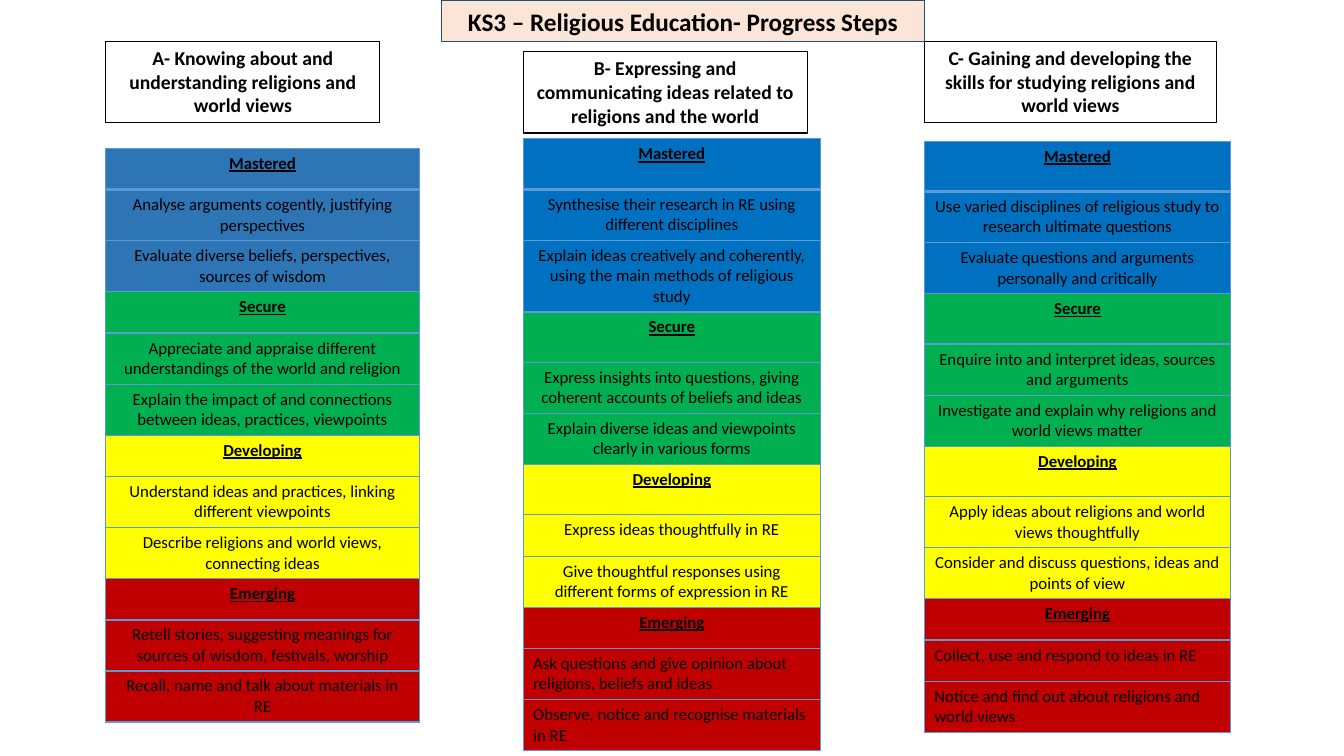
from dataclasses import dataclass
from typing import Any

from lxml.etree import SubElement
from pptx import Presentation
from pptx.dml.color import RGBColor as RGB
from pptx.enum.shapes import MSO_SHAPE as SHAPE
from pptx.enum.text import MSO_ANCHOR as ANCHOR, PP_ALIGN as ALIGN
from pptx.oxml.ns import qn
from pptx.util import Pt

COLOURS = {
    "black": "000000", "border": "5B9BD5", "title": "FBE5D6", "title_line": "1F4E79",
    "soft_blue": "2E75B6", "blue": "0070C0", "green": "00B050",
    "yellow": "FFFF00", "red": "C00000",
}
LEVELS = ("Mastered", "Secure", "Developing", "Emerging")
LOW, MID, HIGH = 29.5, 36, 50.4  # row heights


@dataclass
class Box:
    text: str
    left: float
    top: float
    width: float
    height: float
    size: float = 14
    fill: str | None = None
    line: str = "black"


@dataclass
class Ladder:
    """A column of four levels, each a heading followed by two steps."""
    left: float
    top: float
    width: float
    top_fill: str
    steps: tuple[str, ...]
    heights: tuple[float, ...]
    left_aligned_from: int = 12


LADDERS = (
    Ladder(75.6, 106, 223.9, "soft_blue", (
        "Analyse arguments cogently, justifying perspectives",
        "Evaluate diverse beliefs, perspectives, sources of wisdom",
        "Appreciate and appraise different understandings of the world and religion",
        "Explain the impact of and connections between ideas, practices, viewpoints",
        "Understand ideas and practices, linking different viewpoints",
        "Describe religions and world views, connecting ideas",
        "Retell stories, suggesting meanings for sources of wisdom, festivals, worship",
        "Recall, name and talk about materials in RE",
    ), (LOW, MID, MID) * 4),
    Ladder(373.7, 99.2, 212.4, "blue", (
        "Synthesise their research in RE using different disciplines",
        "Explain ideas creatively and coherently, using the main methods of religious study",
        "Express insights into questions, giving coherent accounts of beliefs and ideas",
        "Explain diverse ideas and viewpoints clearly in various forms",
        "Express ideas thoughtfully in RE",
        "Give thoughtful responses using different forms of expression in RE",
        "Ask questions and give opinion about religions, beliefs and ideas",
        "Observe, notice and recognise materials in RE",
    ), (MID, MID, HIGH, MID, MID, MID, MID, LOW, MID, LOW, MID, MID), 10),
    Ladder(660.2, 100.8, 218.9, "blue", (
        "Use varied disciplines of religious study to research ultimate questions",
        "Evaluate questions and arguments personally and critically",
        "Enquire into and interpret ideas, sources and arguments",
        "Investigate and explain why religions and world views matter",
        "Apply ideas about religions and world views thoughtfully",
        "Consider and discuss questions, ideas and points of view",
        "Collect, use and respond to ideas in RE",
        "Notice and find out about religions and world views",
    ), (MID,) * 9 + (LOW, LOW, MID), 10),
)

BOXES = (
    Box("KS3 – Religious Education- Progress Steps", 315.4, 0.7, 344.9, 28.8,
        18, "title", "title_line"),
    Box("A- Knowing about and understanding religions and world views",
        75.6, 29.5, 195.8, 58.3),
    Box("C- Gaining and developing the skills for studying religions and world views",
        660.2, 29.5, 208.8, 58.3),
    Box("B- Expressing and communicating ideas related to religions and the world",
        373.7, 36.7, 203, 58.3),
)


def colour(name: str) -> RGB:
    return RGB.from_string(COLOURS[name])


def write(tf: Any, text: str, *, size: float = 12, bold: bool = False,
          underline: bool = False, align: Any = ALIGN.CENTER) -> None:
    tf.word_wrap = True
    p = tf.paragraphs[0]
    p.alignment = align
    r = p.add_run()
    r.text = text
    r.font.name = "Calibri"
    r.font.size = Pt(size)
    r.font.bold = bold
    r.font.underline = underline
    r.font.color.rgb = colour("black")


def add_borders(cell: Any, top: float, bottom: float) -> None:
    """Line the cell; the border elements must precede its fill."""
    tc_pr = cell._tc.get_or_add_tcPr()
    sides = (("a:lnL", 1), ("a:lnR", 1), ("a:lnT", top), ("a:lnB", bottom))
    for i, (tag, width) in enumerate(sides):
        ln = SubElement(tc_pr, qn(tag), w=str(Pt(width)))
        fill = SubElement(ln, qn("a:solidFill"))
        SubElement(fill, qn("a:srgbClr"), val=COLOURS["border"])
        tc_pr.insert(i, ln)


def add_ladder(s: Any, ladder: Ladder) -> None:
    frame = s.shapes.add_table(12, 1, Pt(ladder.left), Pt(ladder.top),
                               Pt(ladder.width), Pt(sum(ladder.heights)))
    table = frame.table
    fills = (ladder.top_fill, "green", "yellow", "red")
    for i, height in enumerate(ladder.heights):
        table.rows[i].height = Pt(height)
        level, place = divmod(i, 3)
        heading = place == 0
        text = LEVELS[level] if heading else ladder.steps[2 * level + place - 1]
        cell = table.cell(i, 0)
        cell.fill.solid()
        cell.fill.fore_color.rgb = colour(fills[level])
        add_borders(cell, top=2 if i == 1 else 1, bottom=2 if i == 0 else 1)
        write(cell.text_frame, text, bold=heading, underline=heading,
              align=ALIGN.LEFT if i >= ladder.left_aligned_from else ALIGN.CENTER)


def add_box(s: Any, box: Box) -> None:
    sp = s.shapes.add_shape(SHAPE.RECTANGLE, Pt(box.left), Pt(box.top),
                            Pt(box.width), Pt(box.height))
    sp.shadow.inherit = False
    if box.fill:
        sp.fill.solid()
        sp.fill.fore_color.rgb = colour(box.fill)
    else:
        sp.fill.background()
    sp.line.color.rgb = colour(box.line)
    sp.line.width = Pt(0.75)
    sp.text_frame.vertical_anchor = ANCHOR.TOP
    write(sp.text_frame, box.text, size=box.size, bold=True)


def main() -> None:
    prs = Presentation()
    prs.slide_width, prs.slide_height = Pt(960), Pt(540)
    s = prs.slides.add_slide(prs.slide_layouts[6])
    for ladder in LADDERS:
        add_ladder(s, ladder)
    for box in BOXES:
        add_box(s, box)
    prs.save("out.pptx")


if __name__ == "__main__":
    main()
